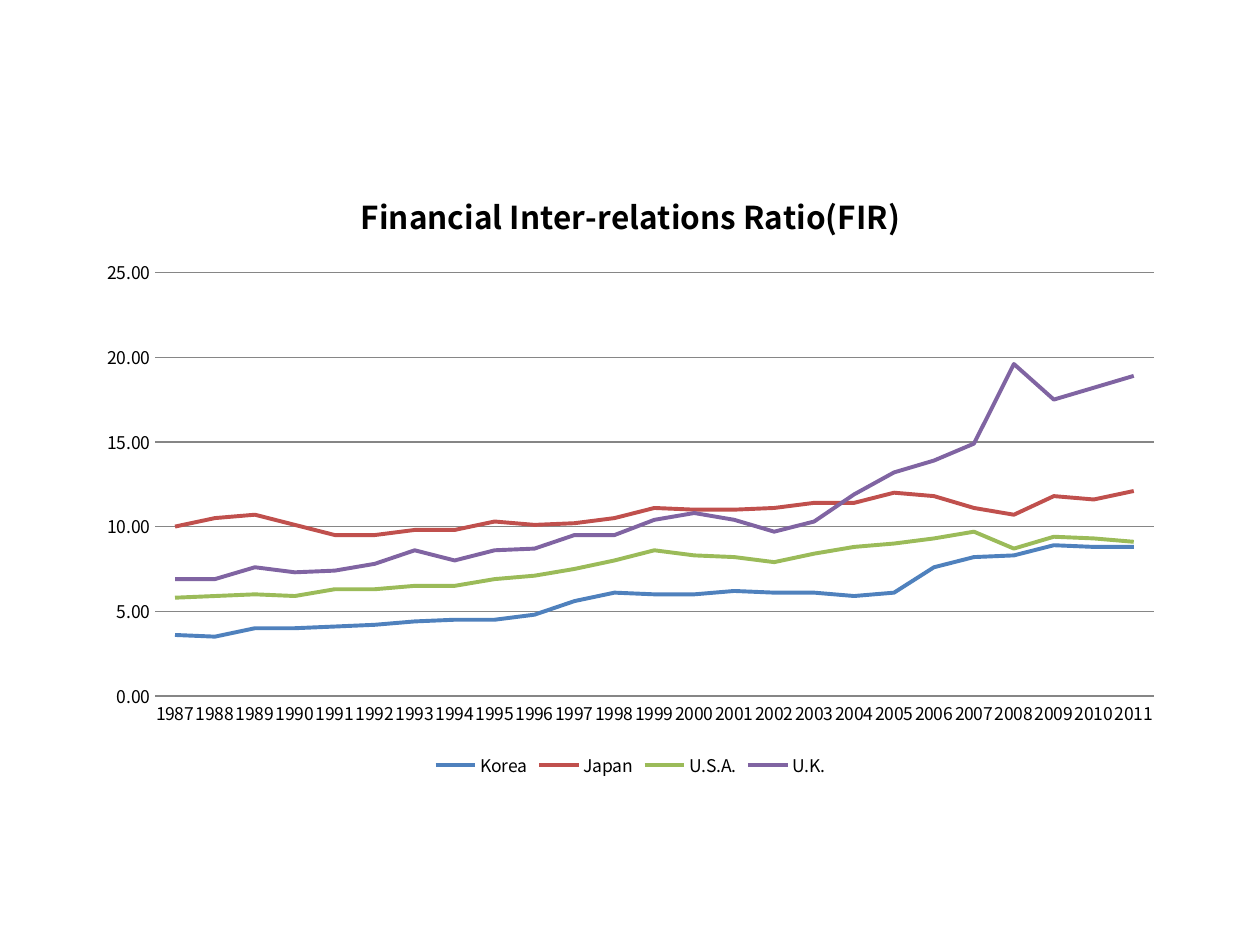
from pptx import Presentation
from pptx.chart.data import CategoryChartData as ChartData
from pptx.dml.color import RGBColor as RGB
from pptx.enum.chart import XL_CHART_TYPE as Kind
from pptx.enum.chart import XL_LEGEND_POSITION as Side
from pptx.enum.chart import XL_TICK_MARK as Tick
from pptx.util import Inches, Pt

COLORS = {
    "text": "000000",
    "grid": "868686",
    "Korea": "4F81BD",
    "Japan": "C0504D",
    "U.S.A.": "9BBB59",
    "U.K.": "8064A2",
}
YEARS = [str(year) for year in range(1987, 2012)]
RATIOS = {
    "Korea": (3.6, 3.5, 4, 4, 4.1, 4.2, 4.4, 4.5, 4.5, 4.8, 5.6, 6.1, 6,
              6, 6.2, 6.1, 6.1, 5.9, 6.1, 7.6, 8.2, 8.3, 8.9, 8.8, 8.8),
    "Japan": (10, 10.5, 10.7, 10.1, 9.5, 9.5, 9.8, 9.8, 10.3, 10.1, 10.2, 10.5, 11.1,
              11, 11, 11.1, 11.4, 11.4, 12, 11.8, 11.1, 10.7, 11.8, 11.6, 12.1),
    "U.S.A.": (5.8, 5.9, 6, 5.9, 6.3, 6.3, 6.5, 6.5, 6.9, 7.1, 7.5, 8, 8.6,
               8.3, 8.2, 7.9, 8.4, 8.8, 9, 9.3, 9.7, 8.7, 9.4, 9.3, 9.1),
    "U.K.": (6.9, 6.9, 7.6, 7.3, 7.4, 7.8, 8.6, 8, 8.6, 8.7, 9.5, 9.5, 10.4,
             10.8, 10.4, 9.7, 10.3, 11.9, 13.2, 13.9, 14.9, 19.6, 17.5, 18.2, 18.9),
}


class Deck:
    face = "Noto Sans CJK KR"

    def __init__(self, slide):
        self.slide = slide

    def font(self, font, size, bold=False):
        style = {"name": self.face, "size": Pt(size), "bold": bold}
        for key, value in style.items():
            setattr(font, key, value)
        font.color.rgb = RGB.from_string(COLORS["text"])

    def line(self, line, color, width):
        line.color.rgb = RGB.from_string(COLORS[color])
        line.width = Pt(width)

    def chart(self, title, cats, rows, box):
        data = ChartData(number_format="0.00")
        data.categories = cats
        for name, values in rows.items():
            data.add_series(name, values)
        chart = self.slide.shapes.add_chart(
            Kind.LINE, *[Inches(n) for n in box], data).chart
        self.font(chart.font, 10)

        # Title and legend
        chart.has_title = True
        frame = chart.chart_title.text_frame
        frame.text = title
        self.font(frame.paragraphs[0].runs[0].font, 18, True)
        chart.chart_title.include_in_layout = False
        chart.has_legend = True
        chart.legend.position = Side.BOTTOM
        chart.legend.include_in_layout = False

        # Axes
        years, scale = chart.category_axis, chart.value_axis
        for axis in (years, scale):
            axis.major_tick_mark = axis.minor_tick_mark = Tick.NONE
        self.line(years.format.line, "grid", 0.75)
        scale.format.line.fill.background()
        self.line(scale.major_gridlines.format.line, "grid", 0.75)
        limits = {"minimum_scale": 0, "maximum_scale": 25, "major_unit": 5}
        for key, value in limits.items():
            setattr(scale, key, value)
        scale.tick_labels.number_format = "0.00"
        scale.tick_labels.number_format_is_linked = False

        # Series lines
        plot = chart.plots[0]
        plot.vary_by_categories = False
        for series in plot.series:
            series.smooth = False
            self.line(series.format.line, series.name, 2.25)


def main():
    show = Presentation()
    show.slide_width, show.slide_height = Inches(10), Inches(7.5)
    deck = Deck(show.slides.add_slide(show.slide_layouts[6]))
    deck.chart("Financial Inter-relations Ratio(FIR)", YEARS, RATIOS,
               (0.68, 1.3, 8.65, 4.91))
    show.save("out.pptx")


if __name__ == "__main__":
    main()
